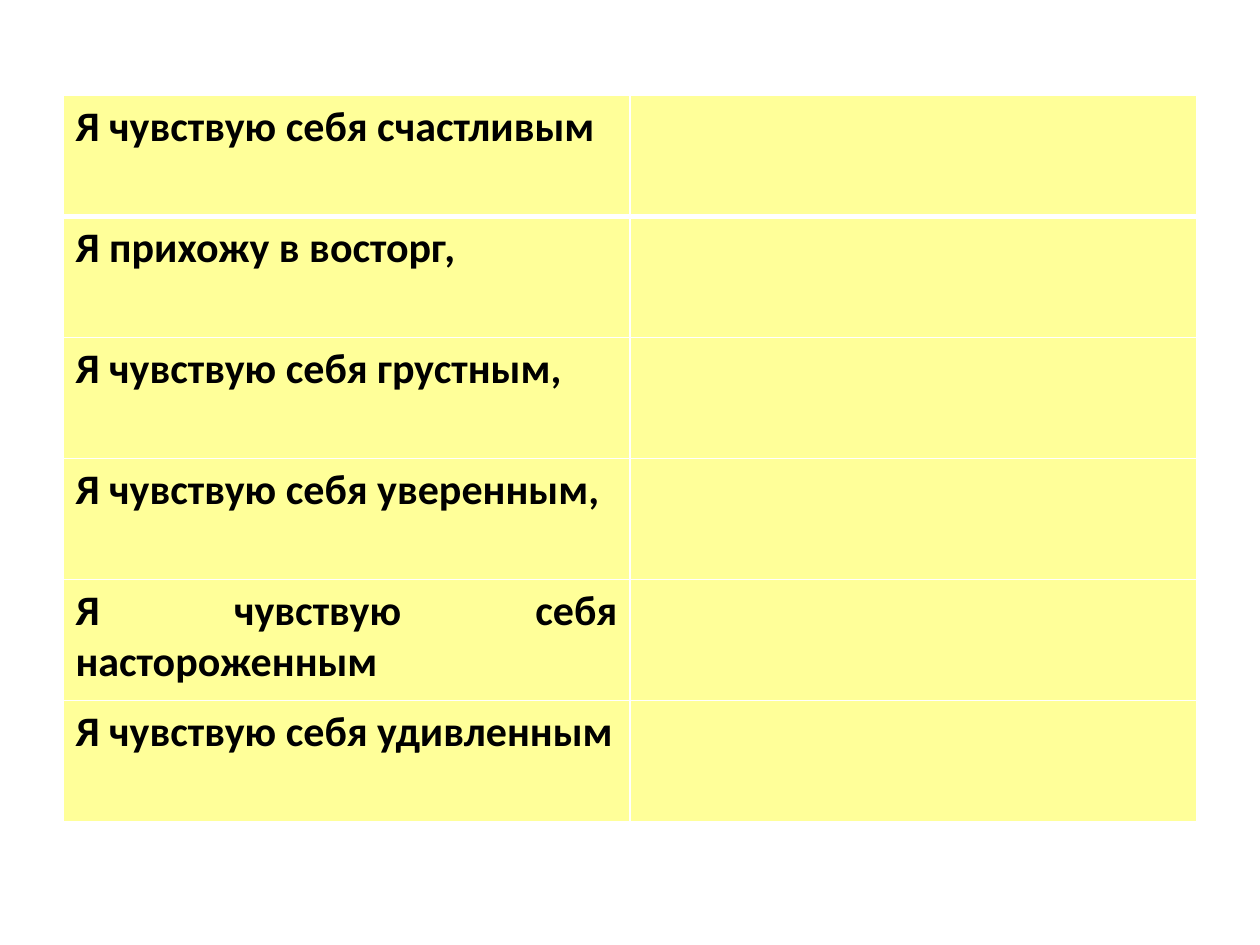
from lxml import etree
from pptx import Presentation
from pptx.dml.color import RGBColor
from pptx.enum import text
from pptx.oxml.ns import qn
from pptx.util import Inches, Pt

# Content
FEELINGS = [
    "Я чувствую себя счастливым",
    "Я прихожу в восторг,",
    "Я чувствую себя грустным,",
    "Я чувствую себя уверенным,",
    "Я чувствую себя настороженным",
    "Я чувствую себя удивленным",
]

THEME = {
    "font": "Calibri", "size": 24, "ink": "000000",
    "cell": "FFFF99", "border": "FFFFFF", "thin": 1, "thick": 3,
}
LEFT, TOP, WIDTH, ROW_HEIGHT = 0.5, 0.76, 9, 0.96
COLUMNS = 2


def set_borders(cell, widths):
    """Draw solid borders; widths maps a side (L, R, T, B) to points."""
    props = cell._tc.get_or_add_tcPr()
    for i, (side, width) in enumerate(widths.items()):
        line = etree.Element(qn(f"a:ln{side}"), w=str(Pt(width)))
        fill = etree.SubElement(line, qn("a:solidFill"))
        etree.SubElement(fill, qn("a:srgbClr"), val=THEME["border"])
        props.insert(i, line)  # borders come before the cell fill


def write(cell, words):
    cell.text_frame.text = words
    p = cell.text_frame.paragraphs[0]
    p.alignment = text.PP_ALIGN.JUSTIFY
    font = p.runs[0].font
    font.name, font.size, font.bold = THEME["font"], Pt(THEME["size"]), True
    font.color.rgb = RGBColor.from_string(THEME["ink"])


# Slide
prs = Presentation()
prs.slide_width, prs.slide_height = Inches(10), Inches(7.5)
s = prs.slides.add_slide(prs.slide_layouts[6])

# Table: feelings on the left, room for answers on the right
table = s.shapes.add_table(
    len(FEELINGS), COLUMNS, Inches(LEFT), Inches(TOP),
    Inches(WIDTH), Inches(ROW_HEIGHT * len(FEELINGS))).table
table.horz_banding = False

for i, (row, feeling) in enumerate(zip(table.rows, FEELINGS)):
    row.height = Inches(ROW_HEIGHT)
    widths = dict.fromkeys("LRTB", THEME["thin"])
    if i == 0:
        widths["B"] = THEME["thick"]
    elif i == 1:
        widths["T"] = THEME["thick"]
    for cell in row.cells:
        cell.fill.solid()
        cell.fill.fore_color.rgb = RGBColor.from_string(THEME["cell"])
        set_borders(cell, widths)
    write(row.cells[0], feeling)

prs.save("out.pptx")
